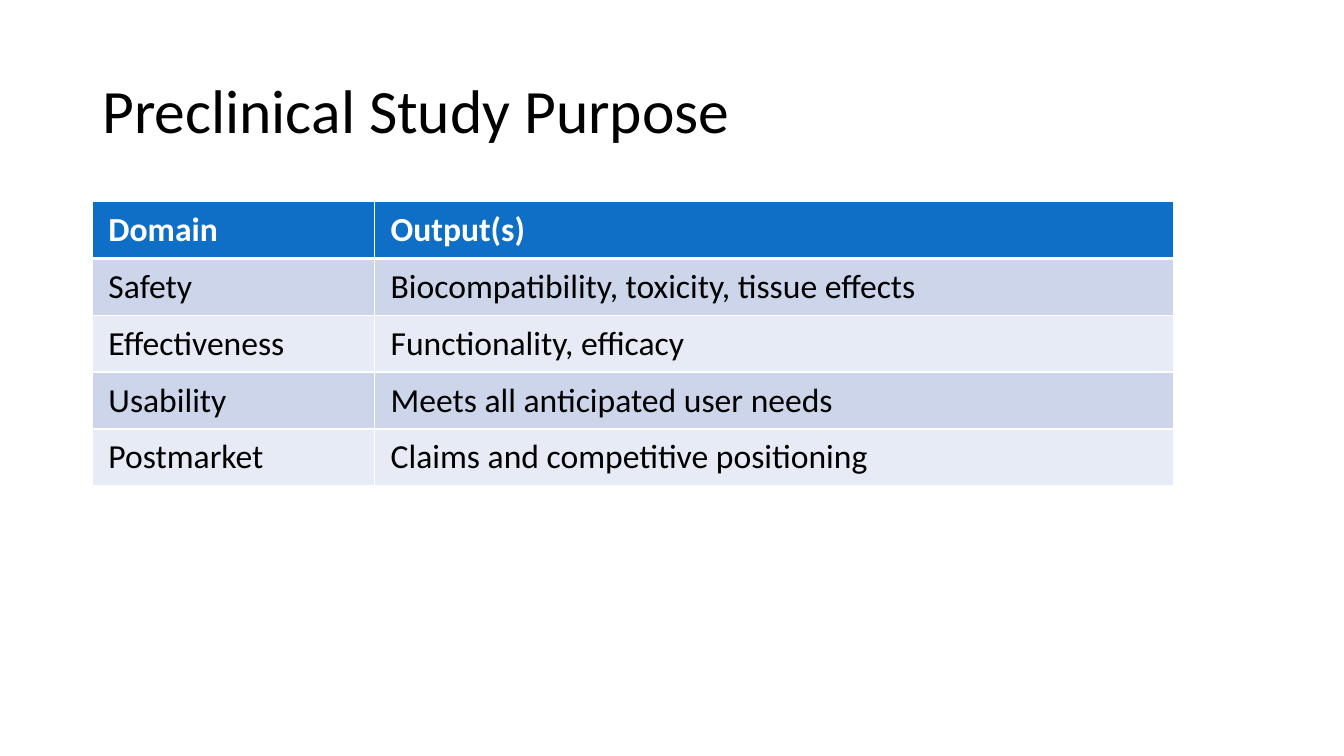
from dataclasses import dataclass

from lxml import etree
from pptx import Presentation
from pptx.dml.color import RGBColor
from pptx.enum.text import MSO_ANCHOR
from pptx.oxml.ns import qn
from pptx.util import Pt

MIDDLE = MSO_ANCHOR.MIDDLE


@dataclass(frozen=True)
class Theme:
    """Colours, font and type sizes of the slide."""
    font: str = "Calibri"
    title_size: float = 44
    table_size: float = 24
    text: str = "000000"
    white: str = "FFFFFF"
    header: str = "0F6FC6"
    bands: tuple = ("CCD5EA", "E7EBF5")


THEME = Theme()

PURPOSES = [
    ("Domain", "Output(s)"),
    ("Safety", "Biocompatibility, toxicity, tissue effects"),
    ("Effectiveness", "Functionality, efficacy"),
    ("Usability", "Meets all anticipated user needs"),
    ("Postmarket", "Claims and competitive positioning"),
]


def write(tf, text, size, color=THEME.text, bold=False, spacing=None):
    """Put one formatted paragraph into a text frame."""
    p = tf.paragraphs[0]
    p.line_spacing = spacing
    r = p.add_run()
    r.text = text
    r.font.name = THEME.font
    r.font.size = Pt(size)
    r.font.bold = bold
    r.font.color.rgb = RGBColor.from_string(color)


def add_title(s, text, left, top, width, height):
    """Add the vertically centred slide title."""
    tf = s.shapes.add_textbox(Pt(left), Pt(top), Pt(width), Pt(height)).text_frame
    tf.word_wrap = True
    tf.vertical_anchor = MIDDLE
    write(tf, text, THEME.title_size, spacing=0.9)


def set_borders(cell, **widths):
    """Draw white cell borders with the given widths in points."""
    tcPr = cell._tc.get_or_add_tcPr()
    for i, (side, width) in enumerate(widths.items()):
        ln = etree.Element(qn(f"a:ln{side}"), w=str(Pt(width)))
        fill = etree.SubElement(ln, qn("a:solidFill"))
        etree.SubElement(fill, qn("a:srgbClr"), val=THEME.white)
        tcPr.insert(i, ln)


def format_cell(cell, text, row):
    """Fill one cell as a header or as part of a banded body row."""
    header = row == 0
    cell.margin_left = cell.margin_right = Pt(11.5)
    cell.margin_top = cell.margin_bottom = Pt(5.76)
    color = THEME.header if header else THEME.bands[(row - 1) % 2]
    cell.fill.solid()
    cell.fill.fore_color.rgb = RGBColor.from_string(color)
    write(cell.text_frame, text, THEME.table_size, bold=header,
          color=THEME.white if header else THEME.text)
    set_borders(cell, L=1, R=1, T=3 if row == 1 else 1, B=3 if header else 1)


def add_table(s, rows, left, top, col_widths, row_height):
    """Add a table with a header row and banded body rows."""
    table = s.shapes.add_table(
        len(rows), len(col_widths), Pt(left), Pt(top),
        Pt(sum(col_widths)), Pt(row_height * len(rows))).table
    for column, width in zip(table.columns, col_widths):
        column.width = Pt(width)
    for i, texts in enumerate(rows):
        table.rows[i].height = Pt(row_height)
        for j, text in enumerate(texts):
            format_cell(table.cell(i, j), text, i)


def main():
    """Build and save the slide."""
    prs = Presentation()
    prs.slide_width, prs.slide_height = Pt(960), Pt(540)
    s = prs.slides.add_slide(prs.slide_layouts[6])
    add_title(s, "Preclinical Study Purpose", 66, 28.75, 828, 104.4)
    add_table(s, PURPOSES, 66, 144, (201.6, 571), 40.6)
    prs.save("out.pptx")


if __name__ == "__main__":
    main()
